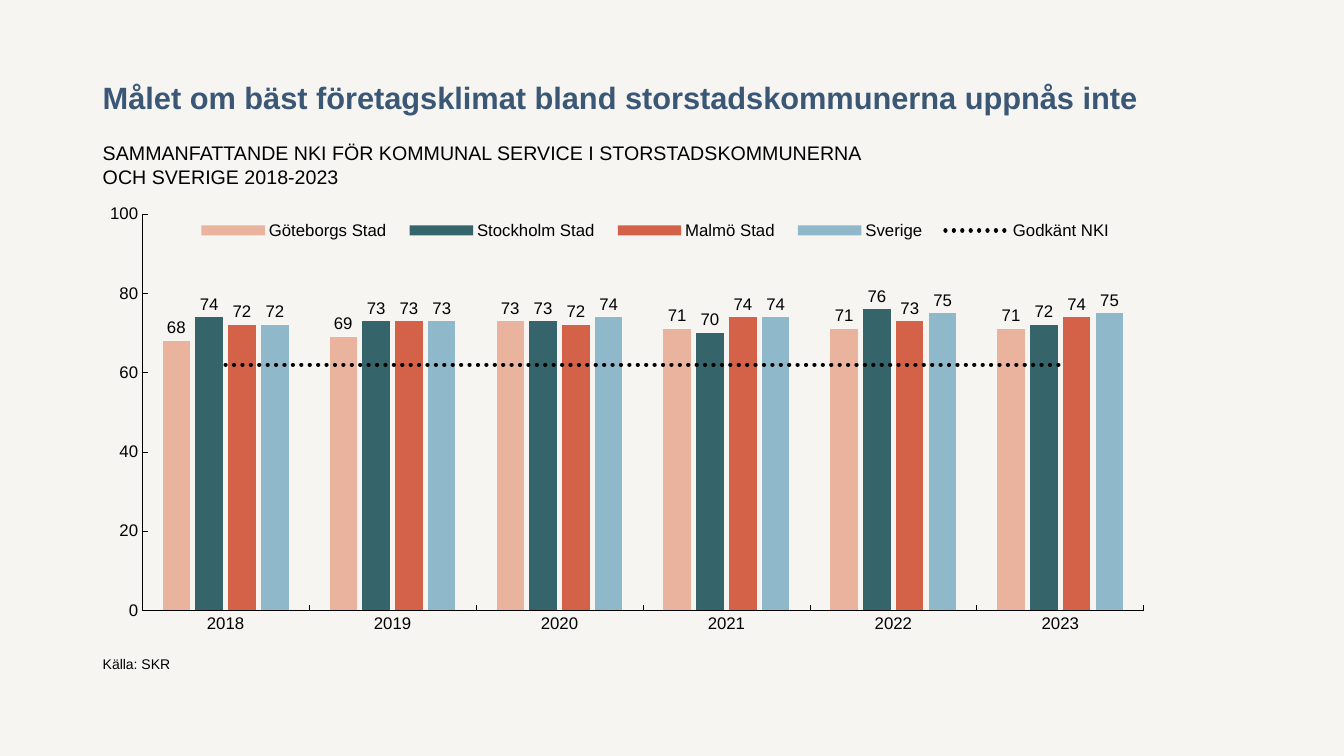
import pptx
import pptx.chart.data
import pptx.dml.color
import pptx.enum.chart
import pptx.enum.dml
import pptx.enum.text
import pptx.oxml
import pptx.oxml.ns
import pptx.util

Cm = pptx.util.Cm
Pt = pptx.util.Pt
qn = pptx.oxml.ns.qn
space = pptx.oxml.ns.nsdecls("c")
anchor = pptx.enum.text.MSO_ANCHOR
face = "Arial"
paper = "F6F5F1"
ink = "000000"
left = 2.34

texts = [
    ("Målet om bäst företagsklimat bland storstadskommunerna uppnås inte",
     1.02, 29.21, 2.03, 22, "3B5776", True, anchor.BOTTOM, 31),
    ("SAMMANFATTANDE NKI FÖR KOMMUNAL SERVICE I STORSTADSKOMMUNERNA OCH SVERIGE 2018-2023",
     3.43, 20.55, 1.3, 14, ink, False, anchor.TOP, None),
    ("Källa: SKR", 16.38, 27.41, 0.69, 10, ink, False, anchor.BOTTOM, None),
]
years = ["2018", "2019", "2020", "2021", "2022", "2023"]
bars = [
    ("Göteborgs Stad", "EAB39E", (68, 69, 73, 71, 71, 71)),
    ("Stockholm Stad", "36646B", (74, 73, 73, 70, 76, 72)),
    ("Malmö Stad", "D36248", (72, 73, 72, 74, 73, 74)),
    ("Sverige", "8FB8CA", (72, 73, 74, 74, 75, 75)),
]
goal = ("Godkänt NKI", 62)
frame = (left, 5.03, 27, 11.1)
inner = (0.05, 0.03, 0.93, 0.9)
inner = (0.046, 0.033, 0.935, 0.9)
key = (0.085, 0.03, 0.88, 0.08)


def paint(color, code):
    color.rgb = pptx.dml.color.RGBColor.from_string(code)


def style(font, size, code=ink, bold=False):
    font.name = face
    font.size = Pt(size)
    font.bold = bold
    paint(font.color, code)


def write(slide, text, top, width, height, size, code, bold, hold, pitch):
    box = slide.shapes.add_textbox(Cm(left), Cm(top), Cm(width), Cm(height))
    body = box.text_frame
    body.word_wrap = True
    body.vertical_anchor = hold
    body.text = text
    line = body.paragraphs[0]
    if pitch:
        line.line_spacing = Pt(pitch)
    style(line.runs[0].font, size, code, bold)


def place(part, rect, target=""):
    for old in part.findall(qn("c:layout")):
        part.remove(old)
    modes = '<c:xMode val="edge"/><c:yMode val="edge"/>'
    sizes = "".join(f'<c:{tag} val="{val}"/>' for tag, val in zip("xywh", rect))
    return pptx.oxml.parse_xml(
        f'<c:layout {space}><c:manualLayout>'
        f'{target}{modes}{sizes}</c:manualLayout></c:layout>')


def split(chart):
    group = chart.plots[0]._element
    last = group.findall(qn("c:ser"))[-1]
    for flag in last.findall(qn("c:invertIfNegative")):
        last.remove(flag)
    line = pptx.oxml.parse_xml(
        f'<c:lineChart {space}><c:grouping val="standard"/>'
        '<c:varyColors val="0"/><c:marker val="1"/></c:lineChart>')
    line.insert(2, last)
    for axis in group.findall(qn("c:axId")):
        line.append(pptx.oxml.parse_xml(
            f'<c:axId {space} val="{axis.get("val")}"/>'))
    group.addnext(line)


def draw(slide):
    enum = pptx.enum.chart
    data = pptx.chart.data.CategoryChartData()
    data.categories = years
    for name, code, vals in bars:
        data.add_series(name, vals)
    data.add_series(goal[0], [goal[1]] * len(years))
    chart = slide.shapes.add_chart(
        enum.XL_CHART_TYPE.COLUMN_CLUSTERED, *map(Cm, frame), data).chart
    style(chart.font, 12)
    chart.has_title = False
    split(chart)

    cols, trend = chart.plots
    cols.gap_width = 150
    cols.overlap = -20
    cols.vary_by_categories = False
    cols.has_data_labels = True
    tags = cols.data_labels
    tags.show_value = True
    tags.position = enum.XL_LABEL_POSITION.OUTSIDE_END
    style(tags.font, 12)
    for item, (name, code, vals) in zip(cols.series, bars):
        item.format.fill.solid()
        paint(item.format.fill.fore_color, code)

    limit = trend.series[0]
    limit.smooth = False
    limit.marker.style = enum.XL_MARKER_STYLE.NONE
    dots = limit.format.line
    dots.width = Pt(3)
    paint(dots.color, ink)
    dots.dash_style = pptx.enum.dml.MSO_LINE.ROUND_DOT
    for edge in limit._element.iter(qn("a:ln")):
        edge.set("cap", "rnd")

    for axis in (chart.category_axis, chart.value_axis):
        axis.has_major_gridlines = False
        axis.major_tick_mark = enum.XL_TICK_MARK.INSIDE
        axis.minor_tick_mark = enum.XL_TICK_MARK.NONE
        axis.format.line.width = Pt(0.5)
        paint(axis.format.line.color, ink)
        style(axis.tick_labels.font, 12)
    scale = chart.value_axis
    scale.minimum_scale = 0
    scale.maximum_scale = 100
    scale.major_unit = 20

    chart.has_legend = True
    legend = chart.legend
    legend.position = enum.XL_LEGEND_POSITION.TOP
    legend.include_in_layout = False
    style(legend.font, 12)
    part = legend._element
    spot = place(part, key)
    part.find(qn("c:legendPos")).addnext(spot)
    area = cols._element.getparent()
    area.insert(0, place(area, inner, '<c:layoutTarget val="inner"/>'))


def main():
    deck = pptx.Presentation()
    deck.slide_width = Cm(33.87)
    deck.slide_height = Cm(19.05)
    slide = deck.slides.add_slide(deck.slide_layouts[6])
    slide.background.fill.solid()
    paint(slide.background.fill.fore_color, paper)
    for text in texts:
        write(slide, *text)
    draw(slide)
    deck.save("out.pptx")


if __name__ == "__main__":
    main()
